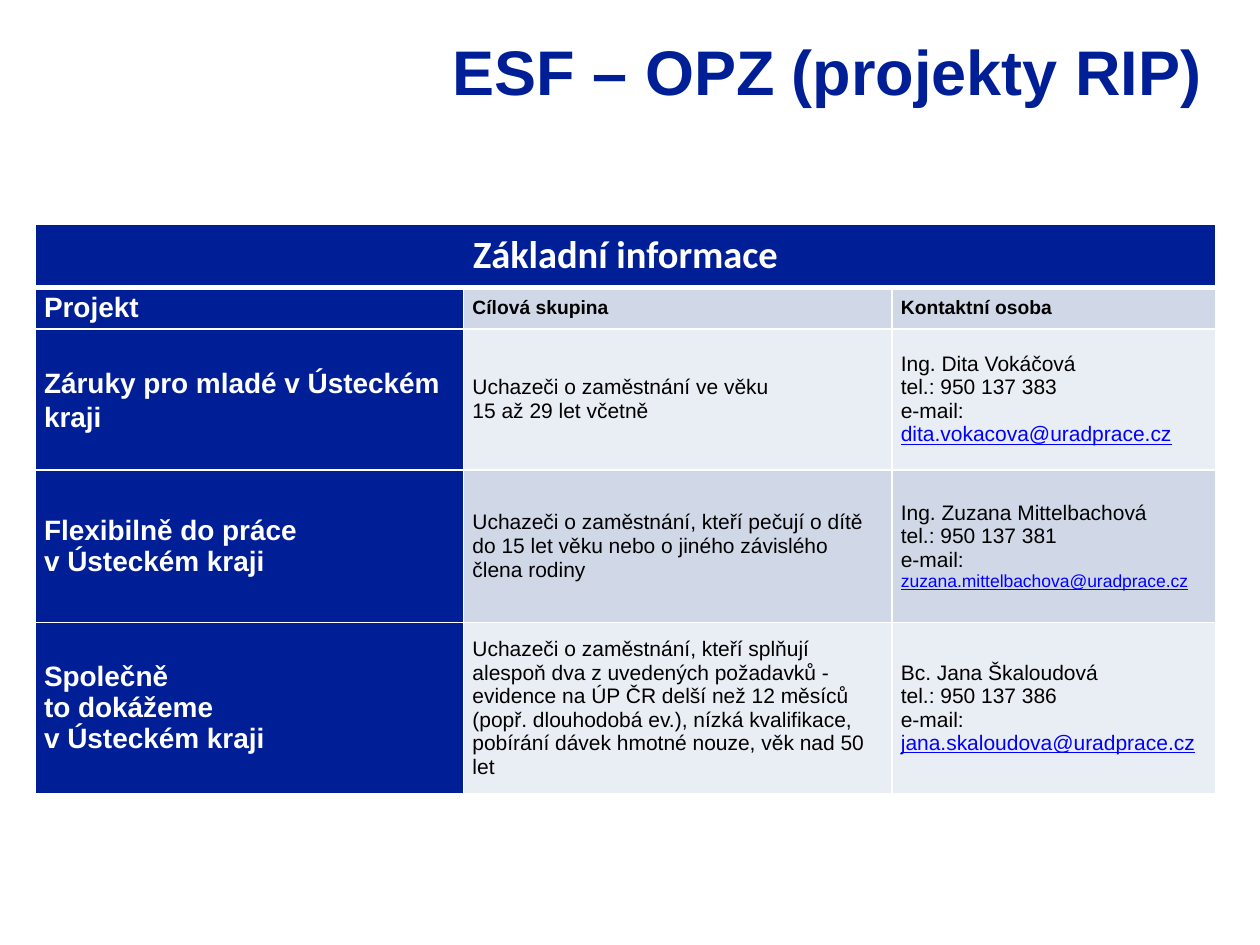
from dataclasses import dataclass

from lxml import etree
from pptx import Presentation
from pptx import util as u
from pptx.dml.color import RGBColor
from pptx.enum import text
from pptx.oxml.ns import qn

TITLE = "ESF – OPZ (projekty RIP)"
HEADING = "Základní informace"
LABELS = ("Projekt", "Cílová skupina", "Kontaktní osoba")
# project, target group, (name, telephone, e-mail, e-mail size)
PROJECTS = [
    ("Záruky pro mladé v Ústeckém kraji",
     "Uchazeči o zaměstnání ve věku\n15 až 29 let včetně",
     ("Ing. Dita Vokáčová", "950 137 383", "dita.vokacova@uradprace.cz", 12)),
    ("Flexibilně do práce\nv Ústeckém kraji",
     "Uchazeči o zaměstnání, kteří pečují o dítě do 15 let věku nebo o "
     "jiného závislého člena rodiny",
     ("Ing. Zuzana Mittelbachová", "950 137 381",
      "zuzana.mittelbachova@uradprace.cz", 10)),
    ("Společně\nto dokážeme\nv Ústeckém kraji",
     "Uchazeči o zaměstnání, kteří splňují alespoň dva z uvedených požadavků "
     "- evidence na ÚP ČR delší než 12 měsíců (popř. dlouhodobá ev.), nízká "
     "kvalifikace, pobírání dávek hmotné nouze, věk nad 50 let",
     ("Bc. Jana Škaloudová", "950 137 386", "jana.skaloudova@uradprace.cz", 12)),
]
COLS = (3.4, 3.4, 2.57)
ROWS = (0.5, 0.33, 1.12, 1.21, 1.36)


@dataclass(frozen=True)
class Theme:
    navy: str = "001E96"
    white: str = "FFFFFF"
    black: str = "000000"
    link: str = "0000FF"
    bands: tuple = ("D0D8E8", "E9EDF4")
    font: str = "Arial"
    heading_font: str = "Calibri"
    title: int = 36
    heading: int = 22
    project: int = 16
    body: int = 12
    label: int = 11


T = Theme()


def write(p, words, size, color, bold=False, font=T.font, underline=False):
    """Add words to a paragraph, one run per line."""
    for i, line in enumerate(words.split("\n")):
        if i:
            p.add_line_break()
        r = p.add_run()
        r.text = line
        r.font.size, r.font.name = u.Pt(size), font
        r.font.bold, r.font.underline = bold, underline
        r.font.color.rgb = RGBColor.from_string(color)


def set_borders(cell, top=1, bottom=1):
    tc_pr = cell._tc.get_or_add_tcPr()
    for side, width in (("L", 1), ("R", 1), ("T", top), ("B", bottom)):
        ln = etree.SubElement(tc_pr, qn(f"a:ln{side}"), w=str(u.Pt(width)))
        fill = etree.SubElement(ln, qn("a:solidFill"))
        etree.SubElement(fill, qn("a:srgbClr"), val=T.white)


def write_contact(tf, name, phone, email, email_size):
    lines = (name, f"tel.: {phone}", "e-mail:")
    for i, line in enumerate(lines):
        p = tf.paragraphs[0] if i == 0 else tf.add_paragraph()
        write(p, line, T.body, T.black)
    write(tf.add_paragraph(), email, email_size, T.link, underline=True)


def add_title(s):
    sp = s.shapes.title
    sp.left, sp.top, sp.width, sp.height = map(u.Inches, (2.4, 0.21, 7.24, 1.5))
    tf = sp.text_frame
    tf.auto_size = text.MSO_AUTO_SIZE.NONE
    tf.vertical_anchor = text.MSO_ANCHOR.TOP
    p = tf.paragraphs[0]
    p.alignment = text.PP_ALIGN.RIGHT
    write(p, TITLE, T.title, T.navy, bold=True)


def add_project_table(s):
    table = s.shapes.add_table(
        len(ROWS), len(COLS), u.Inches(0.28), u.Inches(1.78),
        u.Inches(sum(COLS)), u.Inches(sum(ROWS))).table
    for col, width in zip(table.columns, COLS):
        col.width = u.Inches(width)
    for row, height in zip(table.rows, ROWS):
        row.height = u.Inches(height)

    for r in range(len(ROWS)):
        for c in range(len(COLS)):
            cell = table.cell(r, c)
            cell.margin_left = cell.margin_right = u.Inches(0.07)
            cell.margin_top = cell.margin_bottom = 0
            cell.vertical_anchor = text.MSO_ANCHOR.MIDDLE
            set_borders(cell, 3 if r == 1 else 1, 3 if r == 0 else 1)
            cell.fill.solid()
            color = T.navy if r == 0 or c == 0 else T.bands[(r - 1) % 2]
            cell.fill.fore_color.rgb = RGBColor.from_string(color)

    table.cell(0, 0).merge(table.cell(0, len(COLS) - 1))
    p = table.cell(0, 0).text_frame.paragraphs[0]
    p.alignment = text.PP_ALIGN.CENTER
    write(p, HEADING, T.heading, T.white, True, T.heading_font)

    for c, label in enumerate(LABELS):
        size, color = (T.label, T.black) if c else (T.project, T.white)
        write(table.cell(1, c).text_frame.paragraphs[0], label, size, color, True)

    for r, (project, group, contact) in enumerate(PROJECTS, start=2):
        p = table.cell(r, 0).text_frame.paragraphs[0]
        if "\n" not in project:
            p.line_spacing = 1.1
        write(p, project, T.project, T.white, True)
        write(table.cell(r, 1).text_frame.paragraphs[0], group, T.body, T.black)
        write_contact(table.cell(r, 2).text_frame, *contact)


def main():
    prs = Presentation()
    prs.slide_width, prs.slide_height = u.Inches(10), u.Inches(7.5)
    s = prs.slides.add_slide(prs.slide_layouts[5])
    add_title(s)
    add_project_table(s)
    prs.save("out.pptx")


if __name__ == "__main__":
    main()
